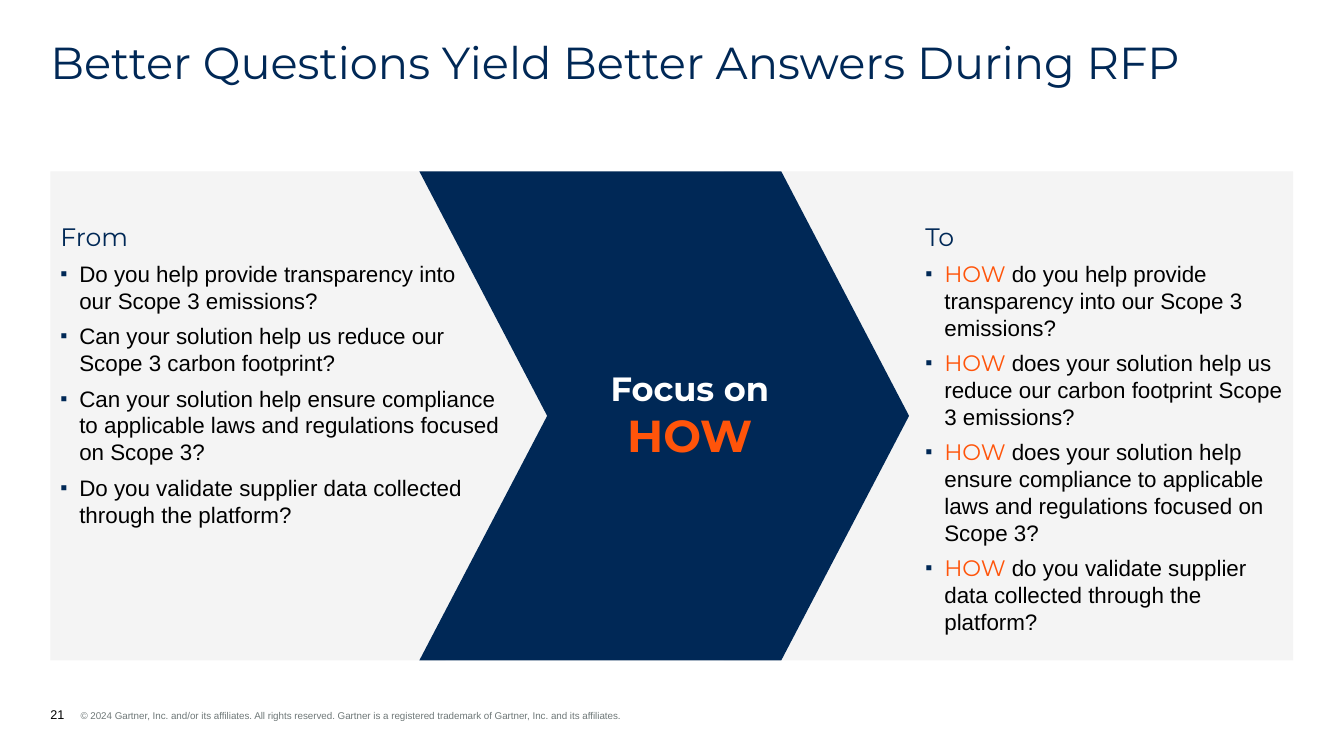
from lxml import etree
from pptx import Presentation
from pptx.dml.color import RGBColor
from pptx.enum.shapes import MSO_SHAPE
from pptx.enum.text import MSO_ANCHOR, PP_ALIGN
from pptx.oxml.ns import qn
from pptx.util import Cm, Pt

PENTAGON = MSO_SHAPE.PENTAGON
TOP, BOTTOM = MSO_ANCHOR.TOP, MSO_ANCHOR.BOTTOM
LEFT, CENTER = PP_ALIGN.LEFT, PP_ALIGN.CENTER

NAVY, ORANGE, PALE = "002856", "FF540A", "F4F4F4"
BLACK, WHITE, GREY = "000000", "FFFFFF", "6F7878"
HEAD_FONT, BODY_FONT = "Montserrat", "Arial"

# Shared geometry in centimetres
MARGIN, RIGHT_EDGE = 1.27, 32.59
PANEL_TOP, PANEL_WIDTH, PANEL_HEIGHT = 4.32, 14.35, 12.32
PANEL_BOTTOM = PANEL_TOP + PANEL_HEIGHT
MIDDLE = PANEL_TOP + PANEL_HEIGHT / 2

FROM_QUESTIONS = [
    "Do you help provide transparency into\nour Scope 3 emissions?",
    "Can your solution help us reduce our\nScope 3 carbon footprint?",
    "Can your solution help ensure compliance\n"
    "to applicable laws and regulations focused on Scope 3?",
    "Do you validate supplier data collected\nthrough the platform?",
]
TO_QUESTIONS = [
    " do you help provide transparency into our Scope 3 emissions?",
    " does your solution help us reduce our carbon footprint Scope 3 emissions?",
    " does your solution help ensure compliance to applicable laws and "
    "regulations focused on Scope 3?",
    " do you validate supplier data collected through the platform?",
]


def color(value):
    return RGBColor.from_string(value)


class SlideBuilder:
    def __init__(self, page):
        self.page = page

    def frame(self, shape, insets=(0, 0, 0, 0), anchor=TOP):
        frame = shape.text_frame
        frame.word_wrap = True
        frame.vertical_anchor = anchor
        (frame.margin_left, frame.margin_top,
         frame.margin_right, frame.margin_bottom) = map(Cm, insets)
        return frame

    def spans(self, para, *spans, align=LEFT):
        """Each span is (text, size, hex color, font, bold)."""
        para.alignment = align
        for text, size, shade, font, bold in spans:
            for index, line in enumerate(text.split("\n")):
                if index:
                    para.add_line_break()
                span = para.add_run()
                span.text = line
                span.font.size = Pt(size)
                span.font.name = font
                span.font.bold = bold
                span.font.color.rgb = color(shade)

    def title(self, text):
        box = self.page.shapes.title
        box.left, box.top = Cm(MARGIN), Cm(1.02)
        box.width, box.height = Cm(RIGHT_EDGE - MARGIN), Cm(1.22)
        para = self.frame(box).paragraphs[0]
        para.line_spacing = 0.9
        para.space_before = Pt(0)
        self.spans(para, (text, 32, NAVY, HEAD_FONT, False))

    def text(self, left, top, width, height, *spans, align=LEFT, anchor=TOP):
        box = self.page.shapes.add_textbox(Cm(left), Cm(top), Cm(width), Cm(height))
        para = self.frame(box, anchor=anchor).paragraphs[0]
        self.spans(para, *spans, align=align)
        return para

    def paint(self, shape, fill):
        shape.shadow.inherit = False
        shape.fill.solid()
        shape.fill.fore_color.rgb = color(fill)
        shape.line.fill.background()
        return shape

    def pentagon(self, left, top, width, height, point, fill):
        shape = self.page.shapes.add_shape(
            PENTAGON, Cm(left), Cm(top), Cm(width), Cm(height))
        shape.adjustments[0] = point
        return self.paint(shape, fill)

    def outline(self, points, fill):
        start, *rest = [(Cm(x), Cm(y)) for x, y in points]
        builder = self.page.shapes.build_freeform(*start)
        builder.add_line_segments(rest, close=True)
        return self.paint(builder.convert_to_shape(), fill)

    def indent(self, para, hanging):
        properties = para._p.get_or_add_pPr()
        properties.set("marL", str(Cm(hanging)))
        properties.set("indent", str(-Cm(hanging)))
        return properties

    def bullet(self, para):
        properties = self.indent(para, 0.48)
        shade = etree.SubElement(properties, qn("a:buClr"))
        etree.SubElement(shade, qn("a:srgbClr"), val=NAVY)
        etree.SubElement(properties, qn("a:buSzPct"), val="90000")
        etree.SubElement(properties, qn("a:buFont"), typeface=BODY_FONT)
        etree.SubElement(properties, qn("a:buChar"), char="▪")

    def questions(self, shape, left_inset, heading, items, lead=""):
        frame = self.frame(shape, (left_inset, 1.27, 0.25, 0.13))
        para = frame.paragraphs[0]
        para.space_after = Pt(6)
        self.spans(para, (heading, 18, NAVY, HEAD_FONT, False))
        for item in items:
            para = frame.add_paragraph()
            self.bullet(para)
            para.space_after = Pt(6)
            if lead:
                self.spans(para, (lead, 16, ORANGE, HEAD_FONT, False))
            self.spans(para, (item, 16, BLACK, BODY_FONT, False))


def main():
    deck = Presentation()
    deck.slide_width, deck.slide_height = Cm(33.87), Cm(19.05)
    builder = SlideBuilder(deck.slides.add_slide(deck.slide_layouts[5]))

    # Title
    builder.title("Better Questions Yield Better Answers During RFP")

    # Question panels
    from_panel = builder.pentagon(
        MARGIN, PANEL_TOP, PANEL_WIDTH, PANEL_HEIGHT, 0.357, PALE)
    builder.questions(from_panel, 0.25, "From", FROM_QUESTIONS)

    to_left = RIGHT_EDGE - PANEL_WIDTH
    to_panel = builder.outline(
        [(to_left, PANEL_TOP), (RIGHT_EDGE, PANEL_TOP),
         (RIGHT_EDGE, PANEL_BOTTOM), (to_left, PANEL_BOTTOM),
         (22.78, MIDDLE)], PALE)
    builder.questions(to_panel, 5.08, "To", TO_QUESTIONS, lead="HOW")

    # Central chevron
    builder.outline(
        [(10.57, PANEL_TOP), (19.69, PANEL_TOP), (22.91, MIDDLE),
         (19.69, PANEL_BOTTOM), (10.57, PANEL_BOTTOM), (13.79, MIDDLE)], NAVY)
    builder.text(15.19, 9.27, 4.39, 2.39,
                 ("Focus on ", 24, WHITE, HEAD_FONT, True),
                 ("HOW", 32, ORANGE, HEAD_FONT, True), align=CENTER)

    # Footer
    footer = builder.text(
        MARGIN, 17.81, 19.94, 0.38,
        ("21", 9, BLACK, BODY_FONT, False),
        ("\t© 2024 Gartner, Inc. and/or its affiliates. All rights reserved. "
         "Gartner is a registered trademark of Gartner, Inc. and its affiliates.",
         7, GREY, BODY_FONT, False), anchor=BOTTOM)
    builder.indent(footer, 0.76)

    deck.save("out.pptx")


if __name__ == "__main__":
    main()
